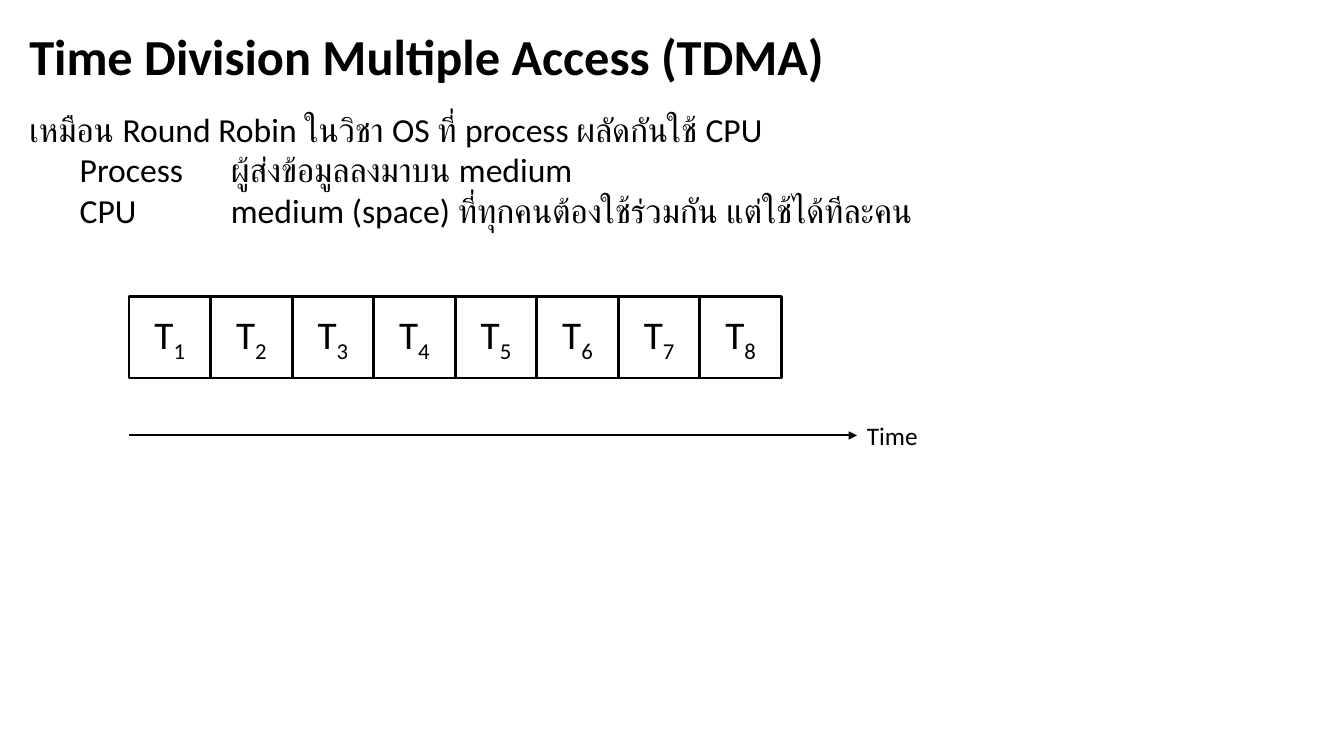
import pptx
import pptx.dml.color
import pptx.enum.dml
import pptx.enum.shapes
import pptx.enum.text
import pptx.oxml
import pptx.oxml.ns
import pptx.util

Inches = pptx.util.Inches
BLACK = pptx.dml.color.RGBColor(0, 0, 0)
FONT = "Calibri"
LEFT = pptx.enum.text.PP_ALIGN.LEFT
CENTER = pptx.enum.text.PP_ALIGN.CENTER
SLOT_COUNT = 8


def place(shape, left, top, width, height):
    shape.left, shape.top = Inches(left), Inches(top)
    shape.width, shape.height = Inches(width), Inches(height)


def style(para, size, bold=False, align=LEFT):
    para.alignment = align
    para.font.name = FONT
    para.font.size = pptx.util.Pt(size)
    para.font.bold = bold
    para.font.color.rgb = BLACK


def add_xml(parent, tag, **attributes):
    child = pptx.oxml.parse_xml(f"<a:{tag} {pptx.oxml.ns.nsdecls('a')}/>")
    for name, value in attributes.items():
        child.set(name, str(value))
    parent.append(child)
    return child


def set_frame(frame, anchor):
    frame.word_wrap = True
    frame.auto_size = pptx.enum.text.MSO_AUTO_SIZE.NONE
    frame.vertical_anchor = anchor


def fill_title(page, left, top, width, height):
    title = page.shapes.title
    place(title, left, top, width, height)
    set_frame(title.text_frame, pptx.enum.text.MSO_ANCHOR.TOP)
    title.text_frame.text = "Time Division Multiple Access (TDMA)"
    style(title.text_frame.paragraphs[0], 36, bold=True)


def fill_body(page, left, top, width, height):
    body = page.placeholders[1]
    place(body, left, top, width, height)
    frame = body.text_frame
    set_frame(frame, pptx.enum.text.MSO_ANCHOR.TOP)
    frame.text = "เหมือน Round Robin ในวิชา OS ที่ process ผลัดกันใช้ CPU"
    frame.add_paragraph().text = (
        "\tProcess\tผู้ส่งข้อมูลลงมาบน medium\v"
        "\tCPU\t\tmedium (space) ที่ทุกคนต้องใช้ร่วมกัน แต่ใช้ได้ทีละคน"
    )
    for para in frame.paragraphs:
        style(para, 24)
        para.space_before = pptx.util.Pt(0)
        # No bullet or indent, and a tab stop at every inch
        properties = para._p.get_or_add_pPr()
        properties.set("marL", "0")
        properties.set("indent", "0")
        add_xml(properties, "buNone")
        stops = add_xml(properties, "tabLst")
        for inch in range(1, 4):
            add_xml(stops, "tab", pos=Inches(inch), algn="l")


def draw_slots(page, left, top, width, height):
    slot_width = width / SLOT_COUNT
    for column in range(SLOT_COUNT):
        slot = page.shapes.add_shape(
            pptx.enum.shapes.MSO_SHAPE.RECTANGLE,
            Inches(left + column * slot_width), Inches(top),
            Inches(slot_width), Inches(height))
        slot.shadow.inherit = False
        slot.fill.background()
        slot.line.color.rgb = BLACK
        slot.line.width = pptx.util.Pt(2)
        set_frame(slot.text_frame, pptx.enum.text.MSO_ANCHOR.MIDDLE)
        para = slot.text_frame.paragraphs[0]
        style(para, 28, align=CENTER)
        para.add_run().text = "T"
        number = para.add_run()
        number.text = str(column + 1)
        number.font._element.set("baseline", "-25000")


def draw_time_axis(page, left, top, width, height):
    label_width = 0.8
    end, middle = left + width - label_width, top + height / 2
    axis = page.shapes.add_connector(
        pptx.enum.shapes.MSO_CONNECTOR.STRAIGHT,
        Inches(left), Inches(middle), Inches(end), Inches(middle))
    axis.line.color.rgb = BLACK
    axis.line.width = pptx.util.Pt(1.5)
    add_xml(axis.line._get_or_add_ln(), "tailEnd", type="triangle")
    add_xml(axis._element.spPr, "effectLst")

    label = page.shapes.add_textbox(
        Inches(end), Inches(top), Inches(label_width), Inches(height))
    set_frame(label.text_frame, pptx.enum.text.MSO_ANCHOR.TOP)
    label.text_frame.text = "Time"
    style(label.text_frame.paragraphs[0], 18)


def main():
    deck = pptx.Presentation()
    deck.slide_width, deck.slide_height = Inches(13.33), Inches(7.5)
    page = deck.slides.add_slide(deck.slide_layouts[1])
    fill_title(page, 0.19, 0.2, 12.94, 0.71)
    fill_body(page, 0.19, 1.03, 12.5, 1.31)
    draw_slots(page, 1.28, 2.94, 6.47, 0.81)
    draw_time_axis(page, 1.28, 4.12, 8.02, 0.4)
    deck.save("out.pptx")


if __name__ == "__main__":
    main()
